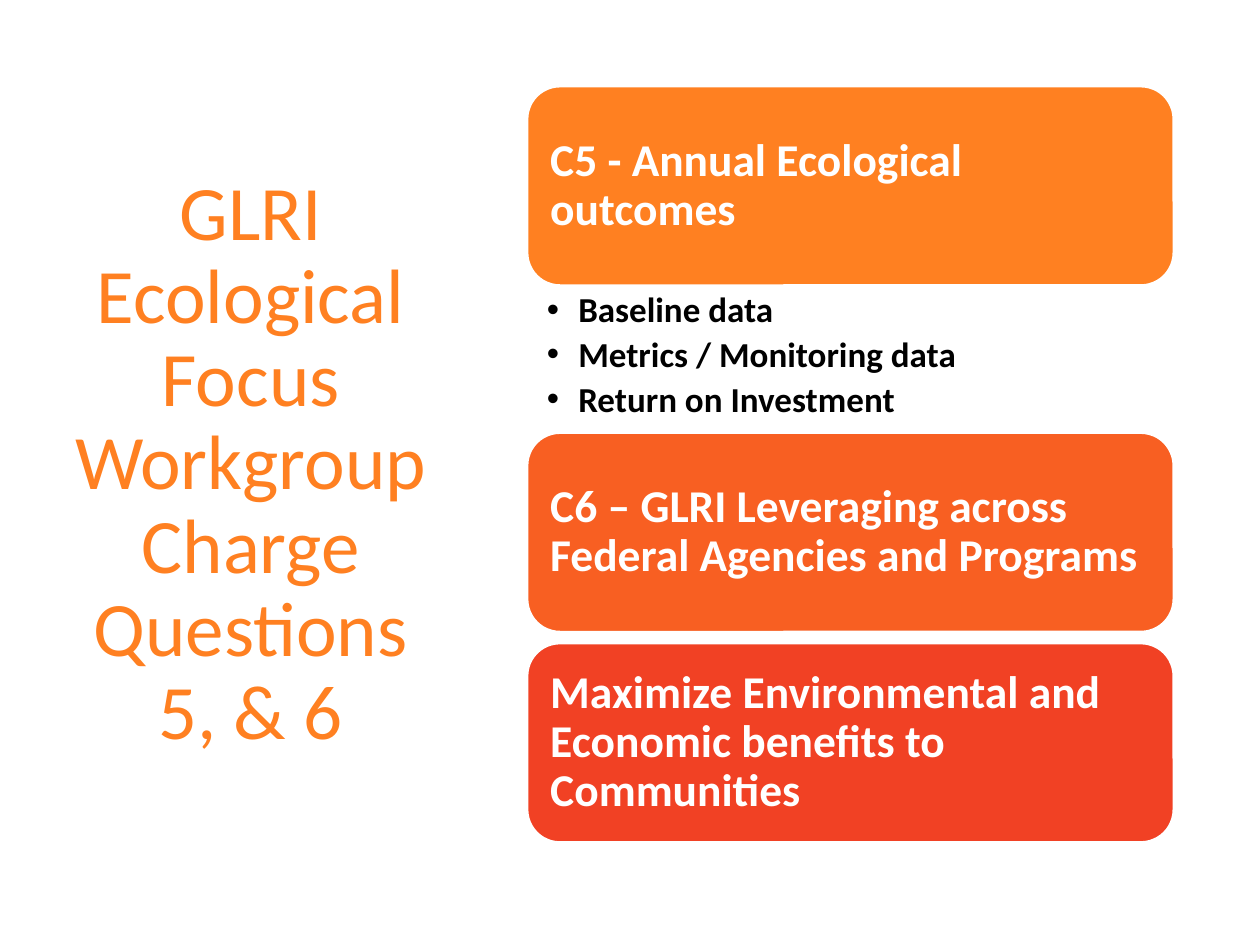
from pptx import Presentation
from pptx.dml.color import RGBColor
from pptx.enum.shapes import MSO_SHAPE
from pptx.enum.text import MSO_ANCHOR, MSO_AUTO_SIZE, PP_ALIGN
from pptx.oxml.ns import qn
from pptx.util import Inches, Pt
from lxml import etree

ROUNDED = MSO_SHAPE.ROUNDED_RECTANGLE
MIDDLE, TOP = MSO_ANCHOR.MIDDLE, MSO_ANCHOR.TOP
CENTER, LEFT = PP_ALIGN.CENTER, PP_ALIGN.LEFT
NO_FIT = MSO_AUTO_SIZE.NONE

THEME = {
    "font": "Calibri",
    "title": {"size": 44, "color": "FF8021", "bold": False},
    "card": {"size": 26, "color": "FFFFFF", "bold": True},
    "bullet": {"size": 20, "color": "000000", "bold": True},
    "border": "FFFFFF",
}
CARD_LEFT, CARD_WIDTH, CARD_HEIGHT = 4.18, 5.14, 1.59
CARDS = [
    (0.68, "FF8021", "C5 - Annual Ecological outcomes"),
    (3.43, "F85F22", "C6 – GLRI Leveraging across Federal Agencies and Programs"),
    (5.1, "F14124", "Maximize Environmental and Economic benefits to Communities"),
]
BULLETS = ["Baseline data", "Metrics / Monitoring data", "Return on Investment"]


def format_frame(tf, anchor, margins):
    values = {"word_wrap": True, "auto_size": NO_FIT, "vertical_anchor": anchor}
    sides = ("margin_left", "margin_top", "margin_right", "margin_bottom")
    values.update(zip(sides, map(Inches, margins)))
    for name, value in values.items():
        setattr(tf, name, value)


def write(p, text, style, align=LEFT):
    p.text = text
    p.alignment = align
    p.line_spacing = 0.9
    look = THEME[style]
    for r in p.runs:
        values = {"name": THEME["font"], "size": Pt(look["size"]), "bold": look["bold"]}
        for name, value in values.items():
            setattr(r.font, name, value)
        r.font.color.rgb = RGBColor.from_string(look["color"])


prs = Presentation()
prs.slide_width, prs.slide_height = Inches(10), Inches(7.5)
slide = prs.slides.add_slide(prs.slide_layouts[5])

title = slide.shapes.title
box = {"left": 0.43, "top": 0.68, "width": 3.12, "height": 6.02}
for name, value in box.items():
    setattr(title, name, Inches(value))
format_frame(title.text_frame, MIDDLE, (0.1, 0.05, 0.1, 0.05))
write(title.text_frame.paragraphs[0],
      "GLRI Ecological Focus Workgroup\vCharge Questions 5, & 6", "title", CENTER)

for top, color, text in CARDS:
    sp = slide.shapes.add_shape(ROUNDED, Inches(CARD_LEFT), Inches(top),
                                Inches(CARD_WIDTH), Inches(CARD_HEIGHT))
    sp.shadow.inherit = False
    sp.fill.solid()
    sp.fill.fore_color.rgb = RGBColor.from_string(color)
    sp.line.color.rgb = RGBColor.from_string(THEME["border"])
    sp.line.width = Pt(2)
    format_frame(sp.text_frame, MIDDLE, (0.11, 0.11, 0.11, 0.11))
    write(sp.text_frame.paragraphs[0], text, "card")

sp = slide.shapes.add_textbox(Inches(CARD_LEFT), Inches(2.28), Inches(CARD_WIDTH), Inches(1.15))
tf = sp.text_frame
format_frame(tf, TOP, (0.16, 0.04, 0.2, 0.04))
for i, text in enumerate(BULLETS):
    p = tf.add_paragraph() if i else tf.paragraphs[0]
    write(p, text, "bullet")
    p.space_after = Pt(4)
    pPr = p._p.get_or_add_pPr()
    pPr.set("marL", str(Inches(0.25)))
    pPr.set("indent", str(Inches(-0.25)))
    etree.SubElement(pPr, qn("a:buFont")).set("typeface", "Arial")
    etree.SubElement(pPr, qn("a:buChar")).set("char", "•")

prs.save("out.pptx")
